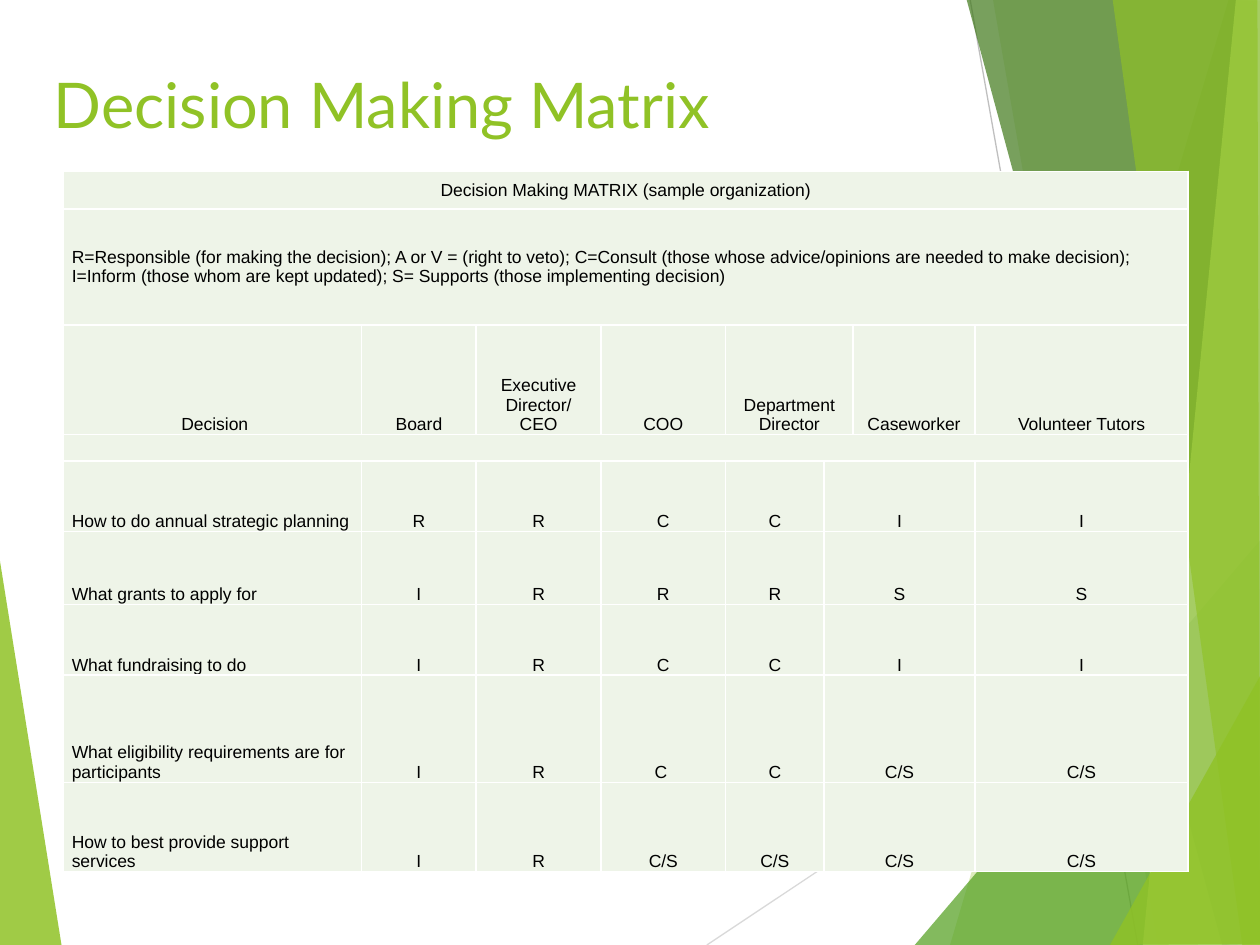
from dataclasses import dataclass

from lxml import etree
from pptx import Presentation
from pptx.dml.color import RGBColor
from pptx.enum import shapes, text
from pptx.oxml.ns import qn
from pptx.util import Inches, Pt


@dataclass(frozen=True)
class Theme:
    lime: str = "90C226"
    green: str = "54A021"
    dark_green: str = "3F7819"
    pale_lime: str = "C0E474"
    light_grey: str = "D9D9D9"
    grey: str = "BFBFBF"
    cell: str = "EEF4E8"
    border: str = "FFFFFF"
    ink: str = "000000"
    title_font: str = "Lato"
    body_font: str = "Arial"
    title_size: int = 36
    body_size: int = 10


THEME = Theme()

# Corner points, colour and opacity in percent, back to front.
LEFT_WEDGE = ([(-0.01, 4.39), (0.49, 7.51), (-0.01, 7.5)], THEME.lime, 85)
RIGHT_FACETS = [
    ([(9.75, 0), (7.54, 7.5), (10.02, 7.51), (10.01, 0.01)], THEME.lime, 30),
    ([(7.88, -0.01), (9.19, 7.5), (10.01, 7.5), (10.01, -0.01)], THEME.lime, 20),
    ([(7.26, 7.5), (10, 4.29), (10.01, 7.5)], THEME.green, 72),
    ([(7.67, -0.01), (9.7, 7.5), (10.01, 7.49), (10.01, -0.01)], THEME.dark_green, 70),
    ([(9.81, -0.01), (9.07, 7.5), (10.01, 7.5), (10, -0.01)], THEME.pale_lime, 70),
    ([(8.83, -0.01), (9.86, 7.5), (10, 7.5), (9.98, -0.01)], THEME.lime, 65),
    ([(8.81, 7.5), (10.01, 5.35), (10.01, 7.49)], THEME.lime, 80),
]

COLUMN_WIDTHS = [2.37, 0.91, 0.99, 0.99, 0.78, 0.23, 0.97, 1.69]
ROW_HEIGHTS = [0.3, 0.92, 0.87, 0.21, 0.56, 0.58, 0.56, 0.85, 0.71]
CAPTION = "Decision Making MATRIX (sample organization)"
LEGEND = (
    "R=Responsible (for making the decision); A or V = (right to veto); "
    "C=Consult (those whose advice/opinions are needed to make decision); "
    "I=Inform (those whom are kept updated); S= Supports (those implementing decision)"
)
ROLES = [" Decision", "Board", "Executive Director/\nCEO", "COO",
         "Department Director", "Caseworker", "Volunteer Tutors"]
DECISIONS = [
    ["How to do annual strategic planning", "R", "R", "C", "C", "I", "I"],
    ["What grants to apply for", "I", "R", "R", "R", "S", "S"],
    ["What fundraising to do", "I", "R", "C", "C", "I", "I"],
    ["What eligibility requirements are for participants",
     "I", "R", "C ", "C", "C/S", "C/S"],
    ["How to best provide support services", "I", "R", "C/S", "C/S", "C/S", "C/S"],
]


class SlideBuilder:
    def __init__(self, slide, theme):
        self.slide = slide
        self.theme = theme

    def facet(self, points, color, opacity):
        """Draw a translucent polygon without an outline."""
        corners = [(Inches(x), Inches(y)) for x, y in points]
        builder = self.slide.shapes.build_freeform(*corners[0], scale=1.0)
        builder.add_line_segments(corners[1:], close=True)
        sp = builder.convert_to_shape()
        sp.shadow.inherit = False
        sp.line.fill.background()
        sp.fill.solid()
        sp.fill.fore_color.rgb = RGBColor.from_string(color)
        clr = sp.element.spPr.find(qn("a:solidFill")).find(qn("a:srgbClr"))
        etree.SubElement(clr, qn("a:alpha"), val=str(opacity * 1000))

    def line(self, start, end, color):
        ends = [Inches(v) for v in (*start, *end)]
        cx = self.slide.shapes.add_connector(shapes.MSO_CONNECTOR.STRAIGHT, *ends)
        cx.line.width = Pt(0.75)
        cx.line.color.rgb = RGBColor.from_string(color)
        etree.SubElement(cx.element.spPr, qn("a:effectLst"))

    def title(self, words, left, top, width, height):
        box = self.slide.shapes.add_textbox(*map(Inches, (left, top, width, height)))
        tf = box.text_frame
        tf.word_wrap = True
        tf.text = words
        t = self.theme
        self.style(tf.paragraphs[0], t.title_font, t.title_size, t.lime)

    def style(self, p, font, size, color):
        p.font.name = font
        p.font.size = Pt(size)
        p.font.color.rgb = RGBColor.from_string(color)

    def table(self, left, top, widths, heights):
        """Add a table whose cells are all filled, bordered and empty."""
        frame = self.slide.shapes.add_table(
            len(heights), len(widths), Inches(left), Inches(top),
            Inches(sum(widths)), Inches(sum(heights)))
        table = frame.table
        table.first_row = table.horz_banding = False
        for column, width in zip(table.columns, widths):
            column.width = Inches(width)
        for row, height in zip(table.rows, heights):
            row.height = Inches(height)
        for cell in table.iter_cells():
            self.cell_box(cell)
            self.cell_text(cell, "")
        return table

    def cell_box(self, cell):
        cell.margin_left = cell.margin_right = Inches(0.07)
        cell.margin_top = cell.margin_bottom = 0
        tc_pr = cell._tc.get_or_add_tcPr()
        for side in ("lnL", "lnR", "lnT", "lnB"):
            ln = etree.SubElement(tc_pr, qn("a:" + side), w=str(Pt(1)))
            fill = etree.SubElement(ln, qn("a:solidFill"))
            etree.SubElement(fill, qn("a:srgbClr"), val=self.theme.border)
        cell.fill.solid()
        cell.fill.fore_color.rgb = RGBColor.from_string(self.theme.cell)

    def cell_text(self, cell, words, centered=True, anchor=text.MSO_ANCHOR.BOTTOM):
        cell.vertical_anchor = anchor
        cell.text_frame.text = words
        t = self.theme
        for p in cell.text_frame.paragraphs:
            p.alignment = text.PP_ALIGN.CENTER if centered else text.PP_ALIGN.LEFT
            self.style(p, t.body_font, t.body_size, t.ink)


def fill_matrix(builder, table):
    last = len(COLUMN_WIDTHS) - 1
    for row in (0, 1, 3):
        table.cell(row, 0).merge(table.cell(row, last))
    middle = text.MSO_ANCHOR.MIDDLE
    builder.cell_text(table.cell(0, 0), CAPTION, anchor=middle)
    builder.cell_text(table.cell(1, 0), LEGEND, centered=False, anchor=middle)

    # The narrow column joins Department in the heading and Caseworker below it.
    table.cell(2, 4).merge(table.cell(2, 5))
    for column, role in zip((0, 1, 2, 3, 4, 6, 7), ROLES):
        builder.cell_text(table.cell(2, column), role)
    for row, entries in enumerate(DECISIONS, start=4):
        table.cell(row, 5).merge(table.cell(row, 6))
        for column, entry in zip((0, 1, 2, 3, 4, 5, 7), entries):
            builder.cell_text(table.cell(row, column), entry, centered=column > 0)


def main():
    prs = Presentation()
    prs.slide_width, prs.slide_height = Inches(10), Inches(7.5)
    builder = SlideBuilder(prs.slides.add_slide(prs.slide_layouts[6]), THEME)

    builder.facet(*LEFT_WEDGE)
    builder.line((5.61, 7.5), (10.01, 4.57), THEME.light_grey)
    builder.line((7.7, 0), (9.03, 7.5), THEME.grey)
    for facet in RIGHT_FACETS:
        builder.facet(*facet)

    builder.title("Decision Making Matrix", 0.33, 0.47, 6.94, 1.44)
    fill_matrix(builder, builder.table(0.5, 1.36, COLUMN_WIDTHS, ROW_HEIGHTS))
    prs.save("out.pptx")


if __name__ == "__main__":
    main()
